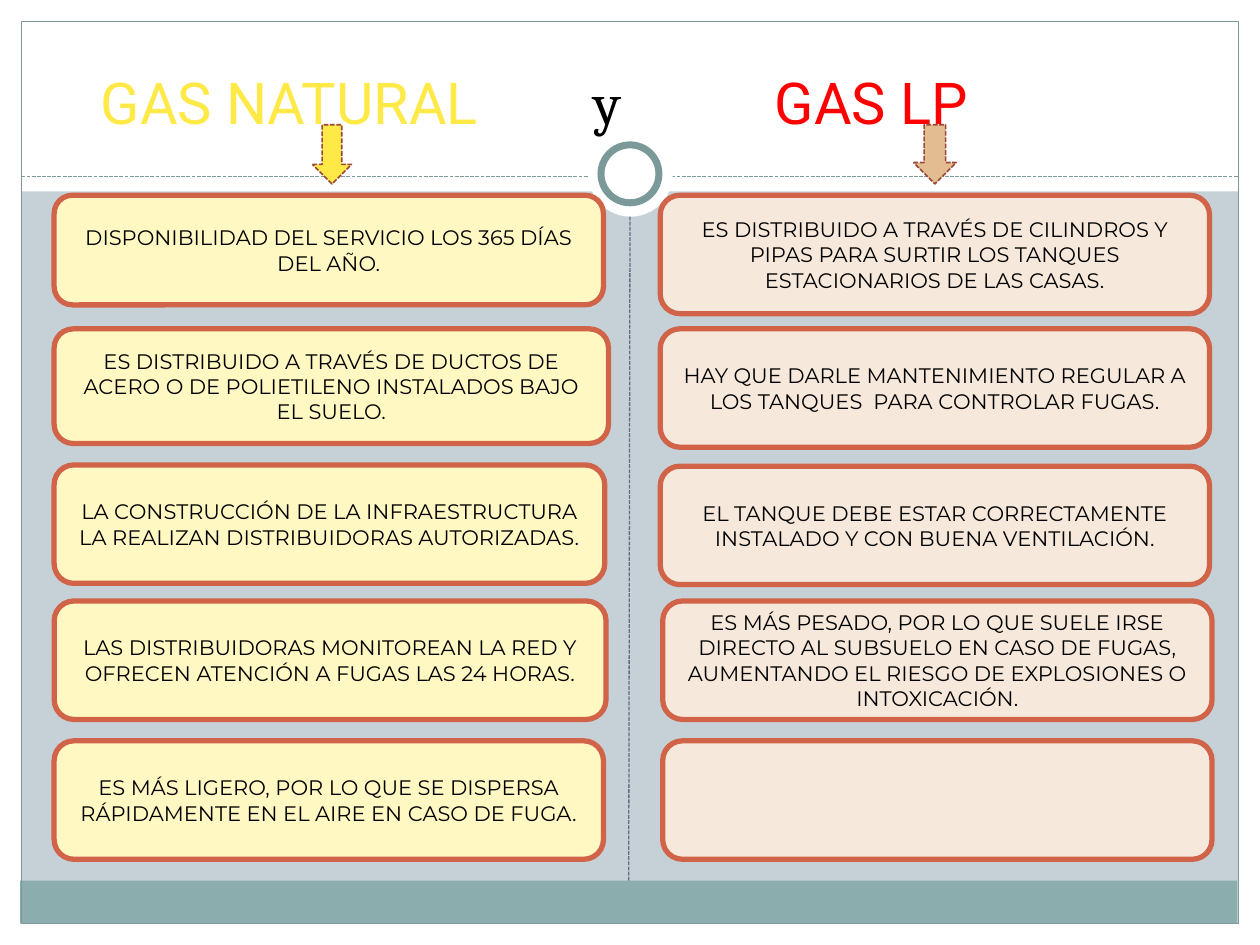
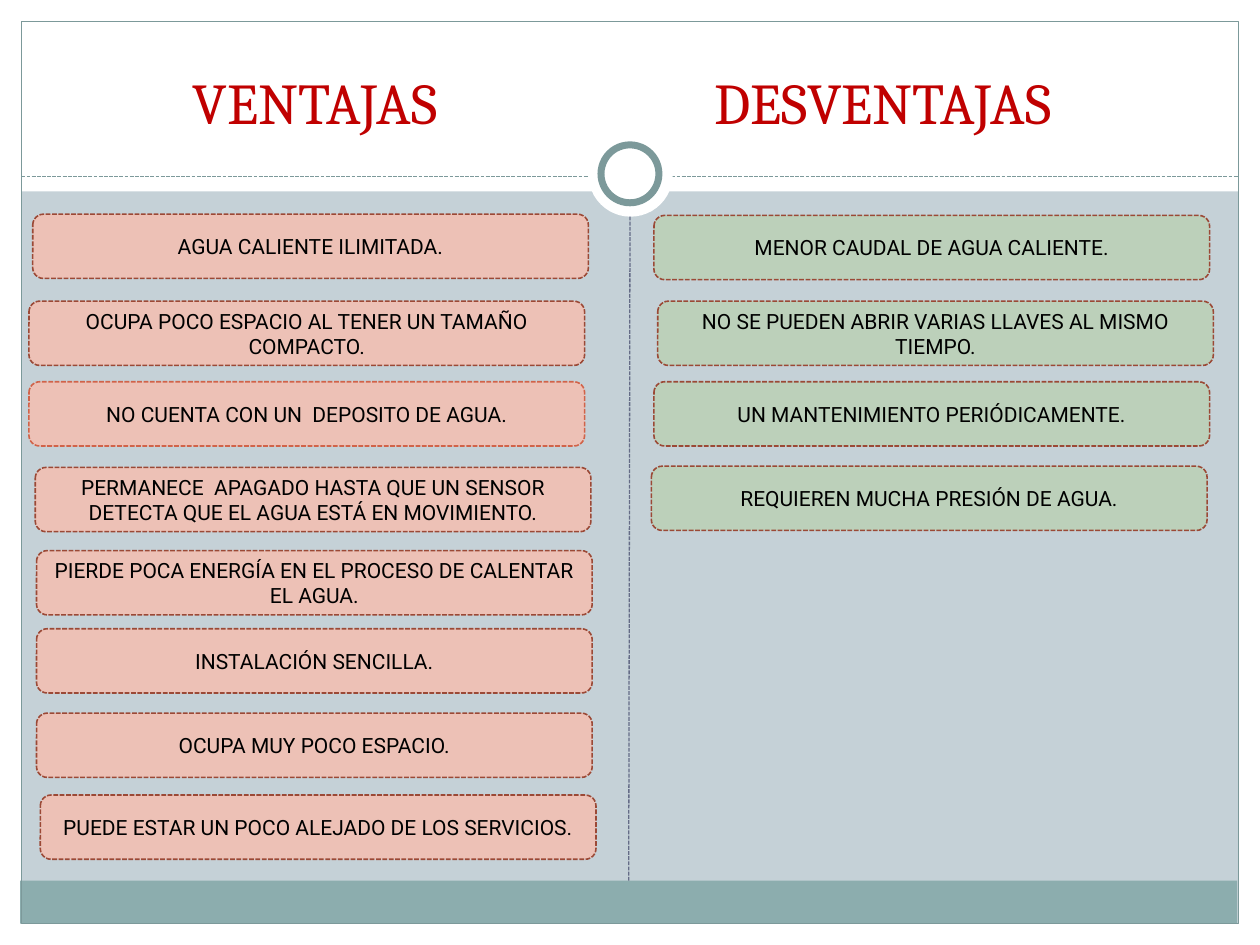
import lxml.etree as etree
import pptx
import pptx.dml.color
import pptx.enum.dml
import pptx.enum.shapes
import pptx.enum.text
import pptx.oxml.ns
import pptx.util

RGB = pptx.dml.color.RGBColor
KIND = pptx.enum.shapes.MSO_SHAPE
ALIGN = pptx.enum.text.PP_ALIGN
ANCHOR = pptx.enum.text.MSO_ANCHOR
DASH = pptx.enum.dml.MSO_LINE.SQUARE_DOT
qn = pptx.oxml.ns.qn

# Colours
WHITE = RGB(0xFF, 0xFF, 0xFF)
BLACK = RGB(0, 0, 0)
MIST = RGB(0xC5, 0xD1, 0xD7)
TEAL = RGB(0x8C, 0xAD, 0xAE)
EDGE = RGB(0x7C, 0x99, 0x9A)
SLATE = RGB(0x64, 0x6B, 0x86)
YELLOW = RGB(0xFF, 0xE9, 0x47)
CREAM = RGB(0xFF, 0xF8, 0xC2)
SAND = RGB(0xF6, 0xE9, 0xDB)
TAN = RGB(0xE3, 0xBC, 0x92)
RUST = RGB(0xD1, 0x63, 0x49)
BROWN = RGB(0x9B, 0x49, 0x36)
PINK = RGB(0xED, 0xC1, 0xB6)
GREEN = RGB(0xBC, 0xD0, 0xBA)
RED = RGB(0xFF, 0, 0)
WINE = RGB(0xC0, 0, 0)

# Grid: 100 columns by 75 rows
COLS, ROWS = 100, 75
CELL = pptx.util.Inches(0.1)


def grid(*cells):
    return [round(cell * CELL) for cell in cells]


def write(para, text, font="Roboto", size=12, color=BLACK, align=ALIGN.CENTER):
    para.alignment = align
    run = para.add_run()
    run.text = text
    run.font.name = font
    run.font.size = pptx.util.Pt(size)
    run.font.color.rgb = color


class Deck:
    """Holds the style and the current slide."""

    def __init__(self):
        self.pres = pptx.Presentation()
        self.pres.slide_width, self.pres.slide_height = grid(COLS, ROWS)
        self.slide = None

    def stroke(self, line, color, width, dash):
        line.color.rgb = color
        line.width = pptx.util.Pt(width)
        if dash:
            line.dash_style = DASH

    def shape(self, kind, box, fill=None, edge=None, width=0.75, dash=False):
        item = self.slide.shapes.add_shape(kind, *grid(*box))
        item.shadow.inherit = False
        if fill is None:
            item.fill.background()
        else:
            item.fill.solid()
            item.fill.fore_color.rgb = fill
        if edge is None:
            item.line.fill.background()
        else:
            self.stroke(item.line, edge, width, dash)
        return item

    def rule(self, start, end, color):
        kind = pptx.enum.shapes.MSO_CONNECTOR.STRAIGHT
        item = self.slide.shapes.add_connector(kind, *grid(*start, *end))
        self.stroke(item.line, color, 0.75, True)
        etree.SubElement(item.element.spPr, qn("a:effectLst"))
        return item

    def card(self, kind, box, text, font, **look):
        item = self.shape(kind, box, **look)
        if text:
            frame = item.text_frame
            frame.word_wrap = True
            frame.vertical_anchor = ANCHOR.MIDDLE
            write(frame.paragraphs[0], text, font=font)

    def title(self, *parts):
        """Each part is its tab stop in columns, text, font and colour."""
        item = self.slide.shapes.title
        item.left, item.top, item.width, item.height = grid(3.3, 2.5, 93.3, 8.3)
        item.element.getparent().append(item.element)  # above the bands
        frame = item.text_frame
        frame.auto_size = pptx.enum.text.MSO_AUTO_SIZE.NONE
        frame.vertical_anchor = ANCHOR.BOTTOM
        frame.margin_left = frame.margin_right = frame.margin_bottom = 0
        para = frame.paragraphs[0]
        tabs = etree.SubElement(para._p.get_or_add_pPr(), qn("a:tabLst"))
        for stop, text, font, color in parts:
            etree.SubElement(tabs, qn("a:tab"), pos=str(grid(stop)[0]), algn="l")
            write(para, "\t" + text, font=font, size=33, color=color,
                  align=ALIGN.LEFT)

    def start(self):
        """Add a slide with the shared bands, frame, rules and ring."""
        self.slide = self.pres.slides.add_slide(self.pres.slide_layouts[5])
        back = self.slide.background.fill
        back.solid()
        back.fore_color.rgb = MIST
        rim = 1.7
        for box in ((0, ROWS - rim, COLS, rim), (0, 0, COLS, 15.2),
                    (0, 0, rim, ROWS), (COLS - rim, 0, rim, ROWS)):
            self.shape(KIND.RECTANGLE, box, WHITE)
        band = self.shape(KIND.RECTANGLE, (1.6, 69.9, 96.6, 3.4), TEAL)
        self.shape(KIND.RECTANGLE, (rim, rim, COLS - 2 * rim, ROWS - 2 * rim),
                   edge=EDGE)
        self.rule((rim, 14), (COLS - rim, 14), EDGE)
        self.shape(KIND.OVAL, (46.7, 10.5, 6.7, 6.7), WHITE)
        self.shape(KIND.OVAL, (47.7, 11.5, 4.6, 4.6), WHITE, EDGE, 4)
        middle = self.rule((49.9, 69.9), (50, 17.2), SLATE)
        middle.begin_connect(band, 0)


def gases(deck):
    deck.start()
    deck.title((4.7, "GAS NATURAL", "Roboto", YELLOW),
               (43.8, "y", "Cambria", BLACK),
               (58.2, "GAS LP", "Roboto", RED))
    # Cards: left, top, width, height, text
    natural = (
        (4.3, 15.5, 43.6, 8.7,
         "DISPONIBILIDAD DEL SERVICIO LOS 365 DÍAS DEL AÑO."),
        (4.3, 26.1, 44, 9.1, "ES DISTRIBUIDO A TRAVÉS DE DUCTOS DE ACERO "
         "O DE POLIETILENO INSTALADOS BAJO EL SUELO."),
        (4.3, 36.9, 43.7, 9.4, "LA CONSTRUCCIÓN DE LA INFRAESTRUCTURA "
         "LA REALIZAN DISTRIBUIDORAS AUTORIZADAS."),
        (4.3, 47.7, 43.8, 9.4, "LAS DISTRIBUIDORAS MONITOREAN LA RED Y "
         "OFRECEN ATENCIÓN A FUGAS LAS 24 HORAS."),
        (4.3, 58.8, 43.6, 9.4, "ES MÁS LIGERO, POR LO QUE SE DISPERSA "
         "RÁPIDAMENTE EN EL AIRE EN CASO DE FUGA."),
    )
    bottled = (
        (52.4, 15.5, 43.6, 9.4, "ES DISTRIBUIDO A TRAVÉS DE CILINDROS Y "
         "PIPAS PARA SURTIR LOS TANQUES ESTACIONARIOS DE LAS CASAS."),
        (52.4, 26.1, 43.6, 9.4, "HAY QUE DARLE MANTENIMIENTO REGULAR A "
         "LOS TANQUES  PARA CONTROLAR FUGAS."),
        (52.4, 37, 43.6, 9.4, "EL TANQUE DEBE ESTAR CORRECTAMENTE "
         "INSTALADO Y CON BUENA VENTILACIÓN."),
        (52.6, 47.7, 43.6, 9.4, "ES MÁS PESADO, POR LO QUE SUELE IRSE "
         "DIRECTO AL SUBSUELO EN CASO DE FUGAS, AUMENTANDO EL RIESGO DE "
         "EXPLOSIONES O INTOXICACIÓN."),
        (52.6, 58.8, 43.6, 9.4, ""),
    )
    for cards, fill in ((natural, CREAM), (bottled, SAND)):
        for *box, text in cards:
            deck.card(KIND.FLOWCHART_ALTERNATE_PROCESS, box, text,
                      "Montserrat", fill=fill, edge=RUST, width=3)
    # Arrows from the titles
    for left, wide, fill in ((24.8, 3.1, YELLOW), (72.5, 3.4, TAN)):
        deck.shape(KIND.DOWN_ARROW, (left, 9.9, wide, 4.7), fill, BROWN,
                   0.9, True)


def merits(deck):
    deck.start()
    deck.title((12, "VENTAJAS", "Cambria", WINE),
               (53.4, "DESVENTAJAS", "Cambria", WINE))
    # Cards: left, top, edge, text
    pros = (
        (2.6, 17, BROWN, "AGUA CALIENTE ILIMITADA."),
        (2.3, 23.9, BROWN, "OCUPA POCO ESPACIO AL TENER UN TAMAÑO COMPACTO."),
        (2.3, 30.3, RUST, "NO CUENTA CON UN  DEPOSITO DE AGUA."),
        (2.8, 37.1, BROWN, "PERMANECE  APAGADO HASTA QUE UN SENSOR "
         "DETECTA QUE EL AGUA ESTÁ EN MOVIMIENTO."),
        (2.9, 43.7, BROWN,
         "PIERDE POCA ENERGÍA EN EL PROCESO DE CALENTAR EL AGUA."),
        (2.9, 49.9, BROWN, "INSTALACIÓN SENCILLA."),
        (2.9, 56.6, BROWN, "OCUPA MUY POCO ESPACIO."),
        (3.2, 63.1, BROWN, "PUEDE ESTAR UN POCO ALEJADO DE LOS SERVICIOS."),
    )
    cons = (
        (51.9, 17.1, BROWN, "MENOR CAUDAL DE AGUA CALIENTE."),
        (52.2, 23.9, BROWN,
         "NO SE PUEDEN ABRIR VARIAS LLAVES AL MISMO TIEMPO."),
        (51.9, 30.3, BROWN, "UN MANTENIMIENTO PERIÓDICAMENTE."),
        (51.7, 37, BROWN, "REQUIEREN MUCHA PRESIÓN DE AGUA."),
    )
    for cards, fill in ((pros, PINK), (cons, GREEN)):
        for left, top, edge, text in cards:
            deck.card(KIND.ROUNDED_RECTANGLE, (left, top, 44.1, 5.1), text,
                      "Roboto", fill=fill, edge=edge, width=0.9, dash=True)


def main():
    deck = Deck()
    gases(deck)
    merits(deck)
    deck.pres.save("out.pptx")


if __name__ == "__main__":
    main()
